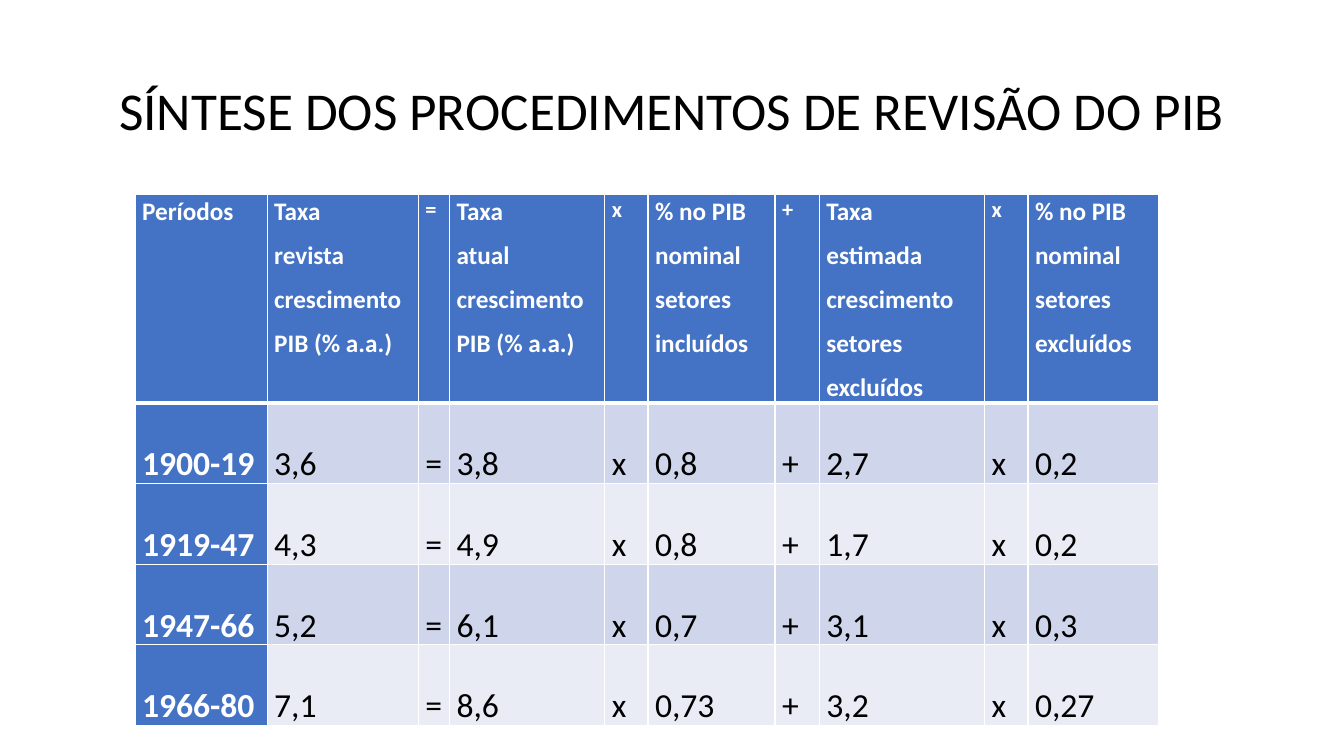
from lxml import etree
from pptx import Presentation, util as u
from pptx.dml.color import RGBColor
from pptx.enum import text
from pptx.oxml import ns

SLIDE_WIDTH, SLIDE_HEIGHT = u.Inches(13.33), u.Inches(7.5)
FONT = "Calibri"
BLACK, WHITE, BLUE = "000000", "FFFFFF", "4472C4"
BANDS = ["CFD5EA", "E9EBF5"]
COLUMN_WEIGHTS = [131, 150, 31, 154, 43, 126, 44, 164, 43, 130]
ROW_WEIGHTS = [207, 64, 64, 64, 64]
OPERATORS = ["=", "x", "+", "x"]
HEADINGS = [
    "Taxa\nrevista\ncrescimento\nPIB (% a.a.)",
    "Taxa\natual\ncrescimento\nPIB (% a.a.)",
    "% no PIB\nnominal\nsetores\nincluídos",
    "Taxa\nestimada\ncrescimento\nsetores\nexcluídos",
    "% no PIB\nnominal\nsetores\nexcluídos",
]
PERIODS = {
    "1900-19": ["3,6", "3,8", "0,8", "2,7", "0,2"],
    "1919-47": ["4,3", "4,9", "0,8", "1,7", "0,2"],
    "1947-66": ["5,2", "6,1", "0,7", "3,1", "0,3"],
    "1966-80": ["7,1", "8,6", "0,73", "3,2", "0,27"],
}


def color(value):
    return RGBColor.from_string(value)


def box(left, top, width, height):
    return (int(SLIDE_WIDTH * left), int(SLIDE_HEIGHT * top),
            int(SLIDE_WIDTH * width), int(SLIDE_HEIGHT * height))


def format_runs(paragraph, size, font_color, bold=False):
    for run in paragraph.runs:
        run.font.name = FONT
        run.font.size = u.Pt(size)
        run.font.bold = bold
        run.font.color.rgb = color(font_color)


def add_title(slide, title):
    shape = slide.shapes.add_textbox(*box(0.07, 0.053, 0.86, 0.193))
    frame = shape.text_frame
    frame.word_wrap = True
    frame.vertical_anchor = text.MSO_ANCHOR.MIDDLE
    frame.text = title
    paragraph = frame.paragraphs[0]
    paragraph.alignment = text.PP_ALIGN.CENTER
    paragraph.line_spacing = 0.9
    format_runs(paragraph, 38, BLACK)


def add_borders(cell, top, bottom):
    properties = cell._tc.get_or_add_tcPr()
    for side, width in zip("LRTB", [1, 1, top, bottom]):
        line = etree.SubElement(properties, ns.qn(f"a:ln{side}"), w=str(u.Pt(width)))
        fill = etree.SubElement(line, ns.qn("a:solidFill"))
        etree.SubElement(fill, ns.qn("a:srgbClr"), val=WHITE)


def fill_cell(cell, content, row, column):
    heading = row == 0
    emphasis = heading or column == 0
    operator = content in OPERATORS
    size = 24 if not heading else 16 if operator else 18
    cell.margin_left = cell.margin_right = u.Inches(0.07)
    cell.margin_top = cell.margin_bottom = 0
    add_borders(cell, top=3 if row == 1 else 1, bottom=3 if heading else 1)
    cell.fill.solid()
    cell.fill.fore_color.rgb = color(BLUE if emphasis else BANDS[(row - 1) % 2])
    cell.text_frame.text = content
    for paragraph in cell.text_frame.paragraphs:
        paragraph.line_spacing = 1.07 if heading else 2.0
        paragraph.space_after = u.Pt(8)
        format_runs(paragraph, size, WHITE if emphasis else BLACK, emphasis)


def equation_row(label, terms):
    row = [label, terms[0]]
    for operator, term in zip(OPERATORS, terms[1:]):
        row += [operator, term]
    return row


def add_revision_table(slide):
    rows = [equation_row("Períodos", HEADINGS)]
    rows += [equation_row(period, values) for period, values in PERIODS.items()]
    left, top, width, height = box(0.1005, 0.257, 0.762, 0.617)
    table = slide.shapes.add_table(
        len(rows), len(rows[0]), left, top, width, height).table
    for column, weight in zip(table.columns, COLUMN_WEIGHTS):
        column.width = int(width * weight / sum(COLUMN_WEIGHTS))
    for row, weight in zip(table.rows, ROW_WEIGHTS):
        row.height = int(height * weight / sum(ROW_WEIGHTS))
    for row_index, row in enumerate(rows):
        for column_index, content in enumerate(row):
            fill_cell(table.cell(row_index, column_index), content,
                      row_index, column_index)


def main():
    presentation = Presentation()
    presentation.slide_width = SLIDE_WIDTH
    presentation.slide_height = SLIDE_HEIGHT
    slide = presentation.slides.add_slide(presentation.slide_layouts[6])
    add_title(slide, "SÍNTESE DOS PROCEDIMENTOS DE REVISÃO DO PIB")
    add_revision_table(slide)
    presentation.save("out.pptx")


if __name__ == "__main__":
    main()
